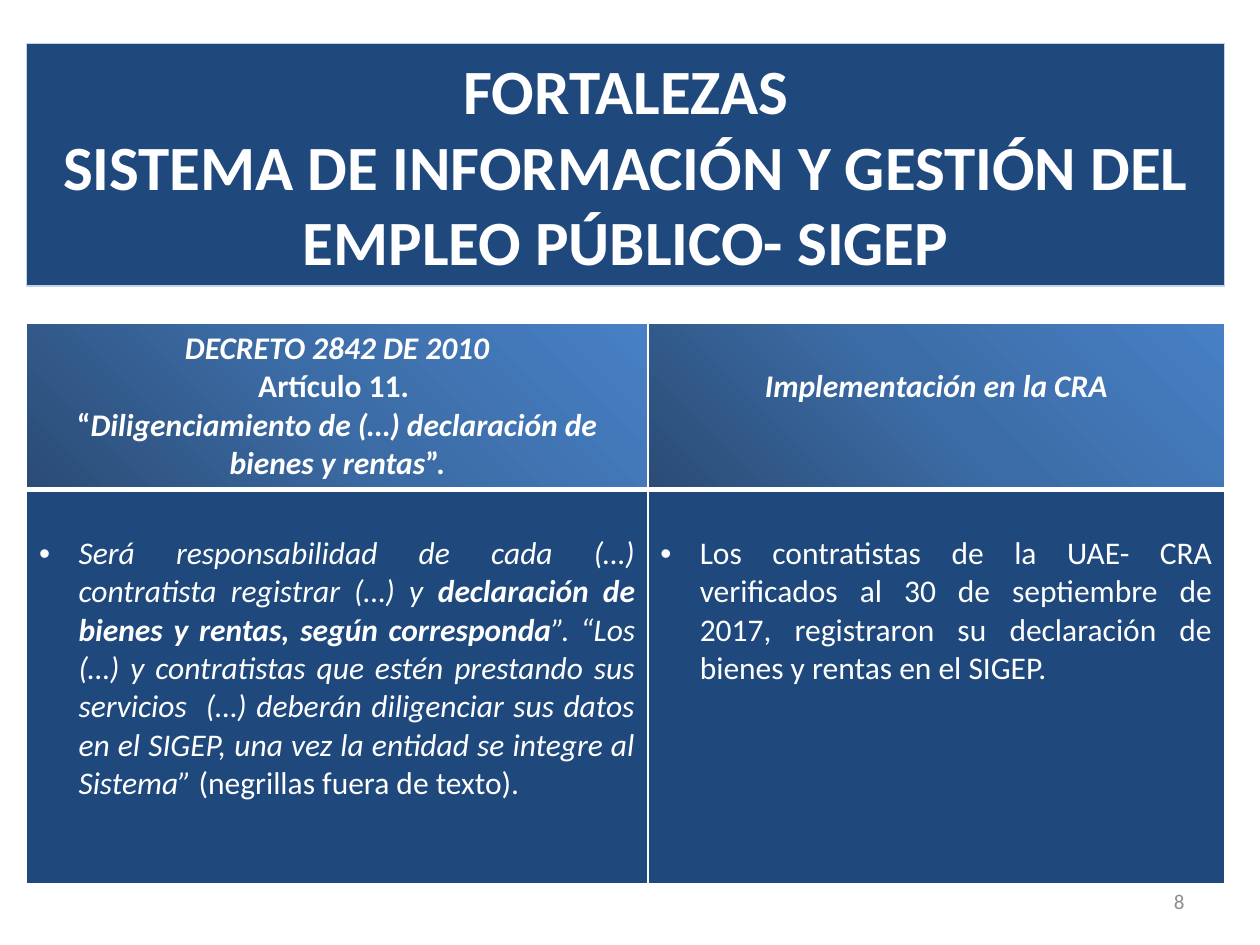
from pptx import Presentation, util as u
from pptx.dml.color import RGBColor
from pptx.enum import shapes, text
from pptx.oxml import parse_xml

Pt = u.Pt
NS = 'xmlns:a="http://schemas.openxmlformats.org/drawingml/2006/main"'
AL = text.PP_ALIGN
NAVY, WHITE, GRAY, EDGE = "1F497D", "FFFFFF", "8C8C8C", "C2D1ED"
STOPS = [(0, "2A4C75"), (50, "3C6CA6"), (100, "4780C5")]

# Content: paragraphs are lists of (text, style), style holding b and/or i
TITLE = [
    [("FORTALEZAS", "b")],
    [("SISTEMA DE INFORMACIÓN Y GESTIÓN DEL EMPLEO PÚBLICO- SIGEP", "b")],
]
HEADS = [
    [
        [("DECRETO 2842 DE 2010", "bi")],
        [("Artículo 11. ", "b")],
        [("“", "b"),
         ("Diligenciamiento de (…) declaración de bienes y rentas", "bi"),
         ("”.", "b")],
    ],
    [[("Implementación en la CRA", "bi")]],
]
BODY = [
    [[
        ("Será responsabilidad de cada (…) contratista registrar (…) y ", "i"),
        ("declaración de bienes y rentas, según corresponda", "bi"),
        ("”. “Los (…) y contratistas que estén prestando sus servicios  (…) "
         "deberán diligenciar sus datos en el SIGEP, una vez la entidad se "
         "integre al Sistema”", "i"),
        (" (negrillas fuera de texto). ", ""),
    ]],
    [[("Los contratistas de la UAE- CRA verificados al 30 de septiembre de "
       "2017, registraron su declaración de bienes y rentas en el SIGEP.", "")]],
]
PAGE = [[("8", "")]]

# Layout
LEFT, WIDTH = 15.2, 684.7
COLS, ROWS = [355, 329.7], [90.7, 225.4]
PAD, LINE = 3.6, 22


def rgb(code):
    return RGBColor.from_string(code)


def write(frame, paras, size=18, color=WHITE, align=AL.CENTER, bullet=False):
    frame.word_wrap = True
    for n, runs in enumerate(paras):
        para = frame.paragraphs[0] if n == 0 else frame.add_paragraph()
        para.alignment = align
        if bullet:
            prop = para._p.get_or_add_pPr()
            prop.set("marL", str(Pt(22.5)))
            prop.set("indent", str(-Pt(22.5)))
            prop.append(parse_xml(f'<a:buFont {NS} typeface="Arial"/>'))
            prop.append(parse_xml(f'<a:buChar {NS} char="•"/>'))
        for words, style in runs:
            run = para.add_run()
            run.text = words
            font = run.font
            font.name, font.size = "Calibri", Pt(size)
            font.bold, font.italic = "b" in style, "i" in style
            font.color.rgb = rgb(color)


def border(cell, **widths):
    prop = cell._tc.get_or_add_tcPr()
    for side in "LRTB":
        prop.append(parse_xml(
            f'<a:ln{side} {NS} w="{Pt(widths.get(side, 1))}"><a:solidFill>'
            f'<a:srgbClr val="{WHITE}"/></a:solidFill></a:ln{side}>'))


def shade(cell):
    stops = "".join(f'<a:gs pos="{pos * 1000}"><a:srgbClr val="{code}"/></a:gs>'
                    for pos, code in STOPS)
    cell._tc.get_or_add_tcPr().append(parse_xml(
        f'<a:gradFill {NS} rotWithShape="1"><a:gsLst>{stops}</a:gsLst>'
        f'<a:lin ang="{315 * 60000}" scaled="0"/></a:gradFill>'))


deck = Presentation()
deck.slide_width, deck.slide_height = Pt(720), Pt(540)
slide = deck.slides.add_slide(deck.slide_layouts[6])

# Title banner
box = slide.shapes.add_shape(shapes.MSO_SHAPE.RECTANGLE,
                             Pt(LEFT), Pt(25), Pt(WIDTH), Pt(138.5))
box.shadow.inherit = False
box.fill.solid()
box.fill.fore_color.rgb = rgb(NAVY)
box.line.color.rgb = rgb(EDGE)
box.line.width = Pt(0.75)
write(box.text_frame, TITLE, size=36)

# Comparison table
table = slide.shapes.add_table(2, 2, Pt(LEFT), Pt(184.5),
                               Pt(WIDTH), Pt(sum(ROWS))).table
table.horz_banding = False
for row, high in zip(table.rows, ROWS):
    row.height = Pt(high)
for c, wide in enumerate(COLS):
    table.columns[c].width = Pt(wide)
    head, cell = table.cell(0, c), table.cell(1, c)
    border(head, B=3)
    shade(head)
    head.margin_top = Pt(PAD + c * LINE)
    write(head.text_frame, HEADS[c])
    border(cell, T=3)
    cell.fill.solid()
    cell.fill.fore_color.rgb = rgb(NAVY)
    cell.margin_top = Pt(PAD + LINE)
    write(cell.text_frame, BODY[c], align=AL.JUSTIFY, bullet=True)

# Page number
note = slide.shapes.add_textbox(Pt(516), Pt(500.5), Pt(168), Pt(28.8))
note.text_frame.vertical_anchor = text.MSO_ANCHOR.MIDDLE
write(note.text_frame, PAGE, size=12, color=GRAY, align=AL.RIGHT)

deck.save("out.pptx")
